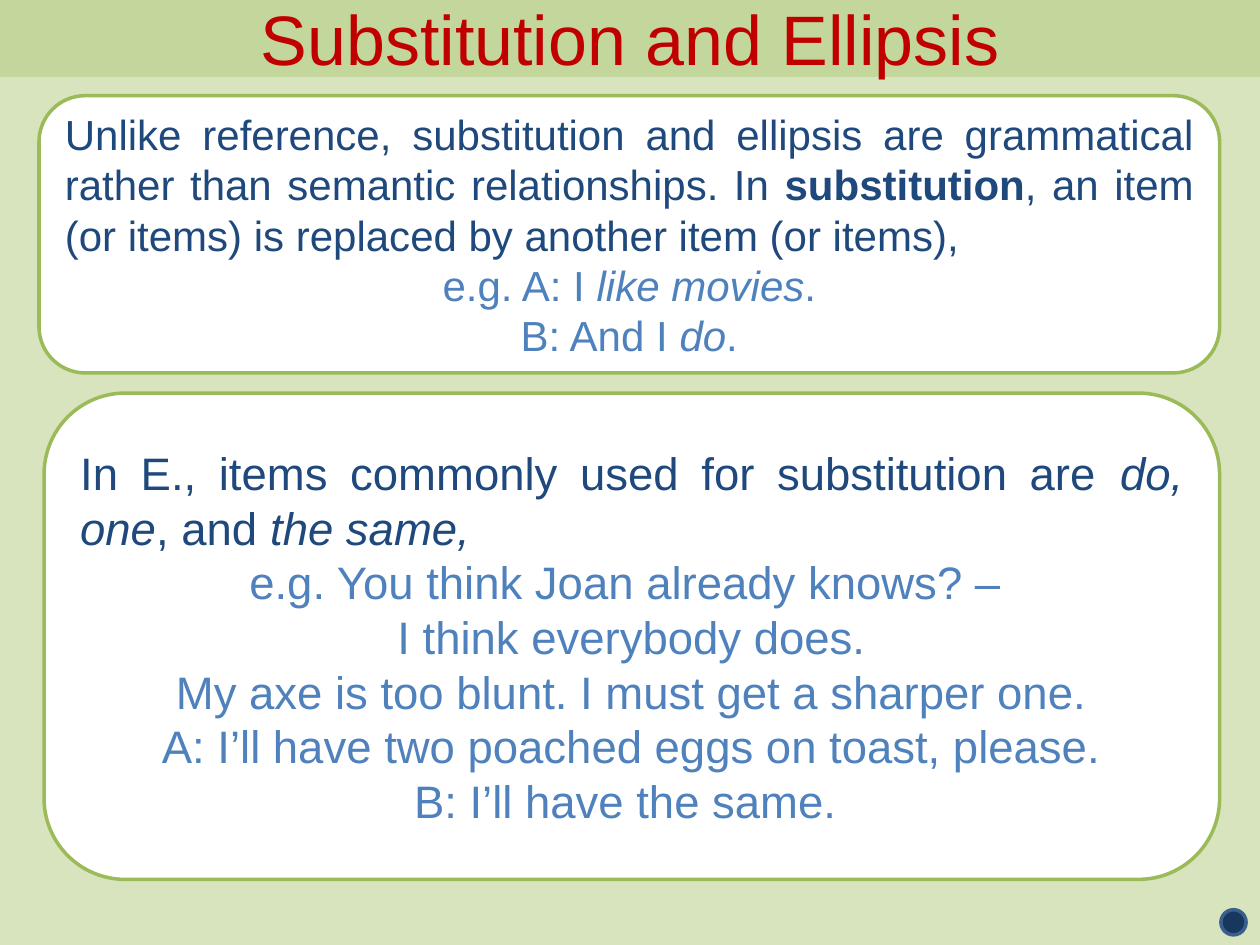
from typing import NamedTuple

from pptx import Presentation, util as u
from pptx.dml.color import RGBColor
from pptx.enum import shapes as s, text as t

COLORS = {
    "back": "D7E4BD", "band": "C3D69B", "title": "C00000",
    "panel": "FFFFFF", "edge": "9BBB59", "body": "1F497D",
    "sample": "4F81BD", "dot": "17375E", "rim": "3A5F8C",
}
KIND = s.MSO_AUTO_SHAPE_TYPE
ALIGN = t.PP_ALIGN


class Run(NamedTuple):
    words: str
    bold: bool = False
    slant: bool = False


class Para(NamedTuple):
    runs: list[Run]
    color: str = "sample"
    align: ALIGN = ALIGN.CENTER


class Box(NamedTuple):
    kind: KIND
    place: tuple[float, float, float, float]
    fill: str
    line: str
    size: int = 0
    paras: tuple[Para, ...] = ()


def point(words: str, **style: bool) -> Run:
    return Run(words, **style)


def rule(*runs: Run) -> Para:
    """Justified statement that opens a panel."""
    return Para(list(runs), "body", ALIGN.JUSTIFY)


def sample(*runs: Run) -> Para:
    """Centred example line."""
    return Para(list(runs))


BOXES = [
    Box(KIND.RECTANGLE, (0, 0, 10, 0.6), "band", "band", 40,
        (Para([Run("Substitution and Ellipsis")], "title"),)),
    Box(KIND.ROUNDED_RECTANGLE, (0.31, 0.76, 9.37, 2.2), "panel", "edge", 24, (
        rule(Run("Unlike reference, substitution and ellipsis are grammatical "
                 "rather than semantic relationships. In "),
             Run("substitution", bold=True),
             Run(", an item (or items) is replaced by another item (or items),")),
        sample(Run("e.g. A: I "), Run("like movies", slant=True), Run(".")),
        sample(Run("B: And I "), Run("do", slant=True), Run(".")),
    )),
    Box(KIND.OVAL, (9.69, 7.22, 0.2, 0.2), "dot", "rim"),
    Box(KIND.ROUNDED_RECTANGLE, (0.35, 3.12, 9.33, 3.86), "panel", "edge", 26, (
        rule(Run("In E., items commonly used for substitution are "),
             Run("do, one", slant=True), Run(", and "),
             Run("the same,", slant=True)),
        sample(Run("e.g. You think Joan already knows? – ")),
        sample(Run("I think everybody does.")),
        sample(Run("My axe is too blunt. I must get a sharper one.")),
        sample(Run("A: I’ll have two poached eggs on toast, please.")),
        sample(Run("B: I’ll have the same. ")),
    )),
]


def tint(name: str) -> RGBColor:
    return RGBColor.from_string(COLORS[name])


def write(frame, paras: tuple[Para, ...], size: int) -> None:
    frame.word_wrap = True
    frame.vertical_anchor = t.MSO_ANCHOR.MIDDLE
    for i, para in enumerate(paras):
        line = frame.add_paragraph() if i else frame.paragraphs[0]
        line.alignment = para.align
        line.font.name = "Arial"
        line.font.size = u.Pt(size)
        line.font.color.rgb = tint(para.color)
        for part in para.runs:
            run = line.add_run()
            run.text = part.words
            if part.bold:
                run.font.bold = True
            if part.slant:
                run.font.italic = True


def draw(slide, box: Box) -> None:
    shape = slide.shapes.add_shape(box.kind, *map(u.Inches, box.place))
    shape.shadow.inherit = False
    shape.fill.solid()
    shape.fill.fore_color.rgb = tint(box.fill)
    shape.line.color.rgb = tint(box.line)
    shape.line.width = u.Pt(2)
    if box.paras:
        write(shape.text_frame, box.paras, box.size)


def main() -> None:
    deck = Presentation()
    deck.slide_width, deck.slide_height = u.Inches(10), u.Inches(7.5)
    slide = deck.slides.add_slide(deck.slide_layouts[6])
    slide.background.fill.solid()
    slide.background.fill.fore_color.rgb = tint("back")
    for box in BOXES:
        draw(slide, box)
    deck.save("out.pptx")


if __name__ == "__main__":
    main()
